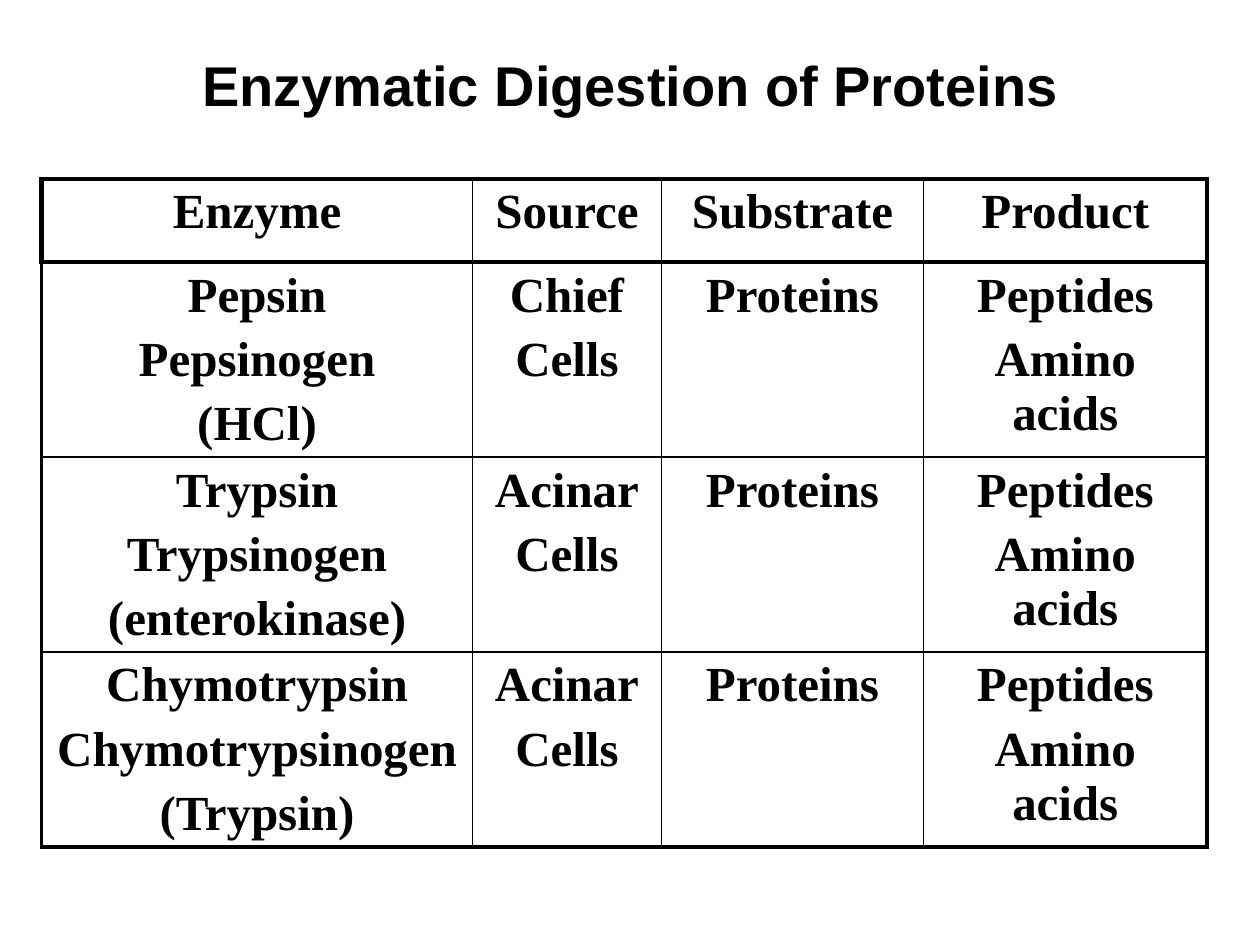
from dataclasses import dataclass

from lxml.etree import SubElement
from pptx import Presentation
from pptx.dml.color import RGBColor
from pptx.enum.text import MSO_ANCHOR as Anchor, PP_ALIGN as Align
from pptx.oxml.ns import qn
from pptx.util import Inches, Pt


@dataclass(frozen=True)
class Theme:
    ink: str = "000000"
    title_font: str = "Arial"
    title_size: float = 32
    table_font: str = "Times New Roman"
    table_size: float = 28
    paragraph_gap: float = 5.6
    thin: float = 1
    frame: float = 2.25
    header_frame: float = 3


class SlideBuilder:
    def __init__(self, slide, theme):
        self.slide = slide
        self.theme = theme

    def format_text(self, text_frame, font_name, size, gap=0):
        for paragraph in text_frame.paragraphs:
            paragraph.alignment = Align.CENTER
            paragraph.space_before = Pt(gap)
            for run in paragraph.runs:
                run.font.name = font_name
                run.font.size = Pt(size)
                run.font.bold = True
                run.font.color.rgb = RGBColor.from_string(self.theme.ink)

    def title(self, text, left, top, width, height):
        heading = self.slide.shapes.title
        heading.left, heading.top = Inches(left), Inches(top)
        heading.width, heading.height = Inches(width), Inches(height)
        heading.text_frame.text = text
        heading.text_frame.vertical_anchor = Anchor.MIDDLE
        self.format_text(heading.text_frame, self.theme.title_font, self.theme.title_size)

    def border(self, cell, side, width):
        line = SubElement(cell._tc.get_or_add_tcPr(), qn(f"a:ln{side}"), w=str(Pt(width)))
        fill = SubElement(line, qn("a:solidFill"))
        SubElement(fill, qn("a:srgbClr"), val=self.theme.ink)

    def border_widths(self, row, column, last_row, last_column):
        """Heavy lines around the header, medium around the body, thin inside."""
        theme = self.theme
        outer = theme.header_frame if row == 0 else theme.frame
        return {
            "L": outer if column == 0 else theme.thin,
            "R": outer if column == last_column else theme.thin,
            "T": theme.header_frame if row <= 1 else theme.thin,
            "B": outer if row in (0, last_row) else theme.thin,
        }

    def table(self, rows, left, top, column_widths, row_heights):
        grid = self.slide.shapes.add_table(
            len(rows), len(column_widths), Inches(left), Inches(top),
            Inches(sum(column_widths)), Inches(sum(row_heights))).table
        grid.first_row = grid.horz_banding = False
        for column, width in zip(grid.columns, column_widths):
            column.width = Inches(width)
        for row, height in zip(grid.rows, row_heights):
            row.height = Inches(height)
        for r, entries in enumerate(rows):
            for c, entry in enumerate(entries):
                cell = grid.cell(r, c)
                cell.text_frame.text = entry
                self.format_text(cell.text_frame, self.theme.table_font,
                                 self.theme.table_size, self.theme.paragraph_gap)
                widths = self.border_widths(r, c, len(rows) - 1, len(entries) - 1)
                for side, width in widths.items():
                    self.border(cell, side, width)
                cell.fill.background()


def main():
    deck = Presentation()
    deck.slide_width, deck.slide_height = Inches(10), Inches(7.5)
    builder = SlideBuilder(deck.slides.add_slide(deck.slide_layouts[5]), Theme())

    # Heading
    builder.title("Enzymatic Digestion of Proteins", 0.42, 0.33, 9.17, 0.67)

    # Enzyme table: every enzyme turns proteins into the same products
    enzymes = [
        ("Pepsin\nPepsinogen\n(HCl)", "Chief\nCells"),
        ("Trypsin\nTrypsinogen\n(enterokinase)", "Acinar\nCells"),
        ("Chymotrypsin\nChymotrypsinogen\n(Trypsin)", "Acinar\nCells"),
    ]
    rows = [("Enzyme", "Source", "Substrate", "Product")]
    rows += [(enzyme, source, "Proteins", "Peptides\nAmino acids")
             for enzyme, source in enzymes]
    builder.table(rows, 0.33, 1.42, [3.42, 1.5, 2.08, 2.25],
                  [0.66] + [1.28] * len(enzymes))

    deck.save("out.pptx")


if __name__ == "__main__":
    main()
